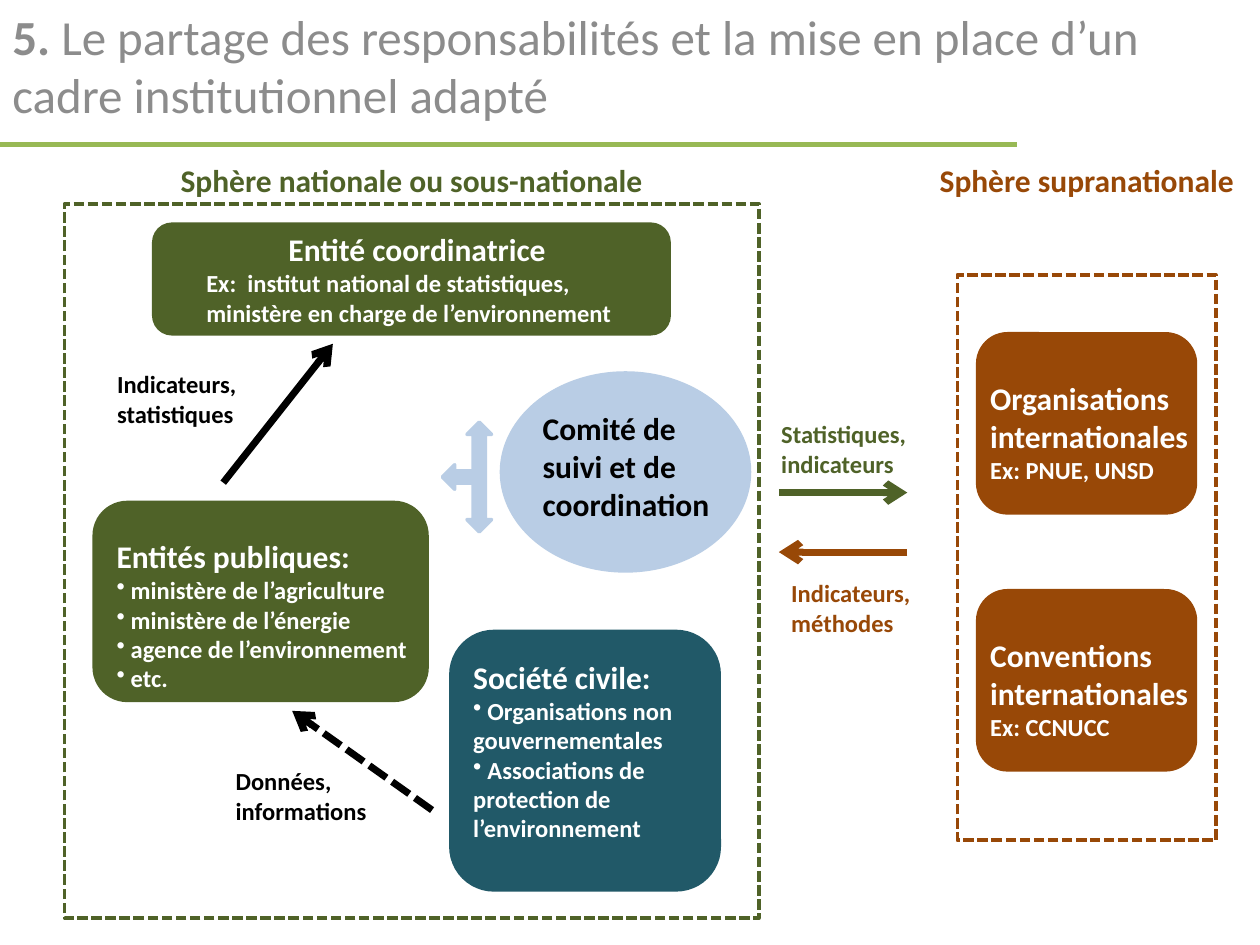
from lxml import etree
from pptx import Presentation
from pptx.dml.color import RGBColor
from pptx.enum.dml import MSO_LINE
from pptx.enum.shapes import MSO_CONNECTOR, MSO_SHAPE
from pptx.enum.text import PP_ALIGN
from pptx.oxml.ns import qn
from pptx.util import Cm, Pt

RECTANGLE = MSO_SHAPE.RECTANGLE
ROUNDED = MSO_SHAPE.ROUNDED_RECTANGLE
OVAL = MSO_SHAPE.OVAL
THREE_WAY = MSO_SHAPE.LEFT_RIGHT_UP_ARROW
STRAIGHT = MSO_CONNECTOR.STRAIGHT
DASHED = MSO_LINE.SQUARE_DOT
LEFT, CENTER = PP_ALIGN.LEFT, PP_ALIGN.CENTER

FONT = "Calibri"
HEADING_SIZE, BODY_SIZE = 18, 14
COLORS = {
    "title": "8C8C8C",
    "rule": "98B955",
    "national": "4F6228",
    "supranational": "984807",
    "civil": "215968",
    "committee": "B9CDE5",
    "white": "FFFFFF",
    "black": "000000",
}


def rgb(color):
    return RGBColor.from_string(COLORS[color])


def inside(box, left, top, width, height):
    return box[0] + left, box[1] + top, width, height


def style_run(run, size, color, bold=True):
    run.font.name = FONT
    run.font.size = Pt(size)
    run.font.bold = bold
    run.font.color.rgb = rgb(color)


def add_text(slide, box, lines, color, sizes, align=LEFT, bulleted=False):
    frame = slide.shapes.add_textbox(*map(Cm, box)).text_frame
    frame.word_wrap = True
    frame.text = "\n".join(lines)
    for index, paragraph in enumerate(frame.paragraphs):
        first = index == 0
        paragraph.alignment = align if first else LEFT
        style_run(paragraph.runs[0], sizes[0 if first else -1], color)
        if bulleted and not first:
            bullet = etree.SubElement(paragraph._p.get_or_add_pPr(), qn("a:buChar"))
            bullet.set("char", "•")


def add_label(slide, box, text, color):
    add_text(slide, box, [text], color, [BODY_SIZE])


def add_heading(slide, box, text, color):
    add_text(slide, box, [text], color, [HEADING_SIZE], CENTER)


def add_figure(slide, kind, box, color):
    figure = slide.shapes.add_shape(kind, *map(Cm, box))
    figure.shadow.inherit = False
    figure.fill.solid()
    figure.fill.fore_color.rgb = rgb(color)
    figure.line.color.rgb = rgb(color)
    figure.line.width = Pt(2)
    return figure


def add_frame(slide, box, color):
    frame = add_figure(slide, RECTANGLE, box, color)
    frame.fill.background()
    frame.line.dash_style = DASHED


def add_card(slide, box, text_area, color, lines, align=LEFT, bulleted=False):
    add_figure(slide, ROUNDED, box, color)
    add_text(slide, inside(box, *text_area), lines, "white",
             [HEADING_SIZE, BODY_SIZE], align, bulleted)


def add_line(slide, box, start, end, color, width, arrow=True, dashed=False):
    x, y = box[:2]
    line = slide.shapes.add_connector(
        STRAIGHT, Cm(x + start[0]), Cm(y + start[1]), Cm(x + end[0]), Cm(y + end[1]))
    line.line.color.rgb = rgb(color)
    line.line.width = Pt(width)
    if dashed:
        line.line.dash_style = DASHED
    if arrow:
        etree.SubElement(line.line._get_or_add_ln(), qn("a:tailEnd")).set("type", "arrow")
    etree.SubElement(line._element.spPr, qn("a:effectLst"))


def add_title(slide, box):
    frame = slide.shapes.add_textbox(*map(Cm, box)).text_frame
    frame.word_wrap = True
    title = "Le partage des responsabilités et la mise en place d’un cadre institutionnel adapté"
    for text, bold in (("5. ", True), (title, False)):
        run = frame.paragraphs[0].add_run()
        run.text = text
        style_run(run, 28, "title", bold)
    add_line(slide, box, (0, 2.92), (20.5, 2.92), "rule", 3, arrow=False)


def add_committee(slide, box):
    add_figure(slide, OVAL, box, "committee")
    add_text(slide, inside(box, 0.58, 0.61, 3.99, 2.57),
             ["Comité de suivi et de coordination"], "black", [HEADING_SIZE])
    links = add_figure(slide, THREE_WAY, inside(box, -1.8, 1.6, 2.21, 0.99), "committee")
    links.rotation = 270


def add_national_sphere(slide, box):
    add_heading(slide, inside(box, 0.4, -0.99, 13.2, 1.02),
                "Sphère nationale ou sous-nationale", "national")
    add_frame(slide, box, "national")
    add_card(slide, inside(box, 1.8, 0.41, 10.39, 2.21), (0.81, 0, 9, 2.23), "national",
             ["Entité coordinatrice",
              "Ex:  institut national de statistiques, ministère en charge de l’environnement"],
             align=CENTER)
    add_card(slide, inside(box, 0.6, 6.02, 6.71, 3.99), (0.2, 0.58, 6.58, 2.87), "national",
             ["Entités publiques:", " ministère de l’agriculture", " ministère de l’énergie",
              " agence de l’environnement", " etc."], bulleted=True)
    add_card(slide, inside(box, 7.79, 8.62, 5.41, 5.21), (0.2, 0.41, 5.41, 4.01), "civil",
             ["Société civile:", " Organisations non gouvernementales",
              " Associations de protection de l’environnement"], bulleted=True)
    add_committee(slide, inside(box, 8.81, 3.41, 5, 3.99))
    add_label(slide, inside(box, 0.81, 3.21, 3.61, 1.45), "Indicateurs, statistiques", "black")
    add_line(slide, box, (3.2, 5.62), (5.41, 2.82), "black", 4)
    add_label(slide, inside(box, 3.2, 11.21, 3.4, 1.45), "Données, informations", "black")
    add_line(slide, box, (7.41, 12.22), (4.59, 10.22), "black", 4, dashed=True)


def add_exchanges(slide, box):
    add_label(slide, inside(box, 0, 0, 3.2, 1.45), "Statistiques, indicateurs", "national")
    add_line(slide, box, (0.2, 1.6), (2.79, 1.6), "national", 4)
    add_line(slide, box, (2.79, 2.8), (0.2, 2.8), "supranational", 4)
    add_label(slide, inside(box, 0.2, 3.2, 3, 1.45), "Indicateurs, méthodes", "supranational")


def add_supranational_sphere(slide, box):
    add_heading(slide, inside(box, -2.79, -2.42, 10.8, 1.02),
                "Sphère supranationale", "supranational")
    add_frame(slide, box, "supranational")
    bodies = (
        ("Organisations internationales", "Ex: PNUE, UNSD"),
        ("Conventions internationales", "Ex: CCNUCC"),
    )
    for row, lines in enumerate(bodies):
        add_card(slide, inside(box, 0.41, 1.19 + row * 5.18, 4.39, 3.61),
                 (0, 0.79, 4.6, 2.39), "supranational", lines)


def main():
    presentation = Presentation()
    presentation.slide_width, presentation.slide_height = Cm(25.4), Cm(19.05)
    slide = presentation.slides.add_slide(presentation.slide_layouts[6])
    add_title(slide, (0, 0, 24.9, 3.25))
    add_national_sphere(slide, (1.3, 4.11, 14, 14.4))
    add_exchanges(slide, (15.5, 8.33, 3.2, 4.65))
    add_supranational_sphere(slide, (19.3, 5.54, 5.21, 11.4))
    presentation.save("out.pptx")


if __name__ == "__main__":
    main()
